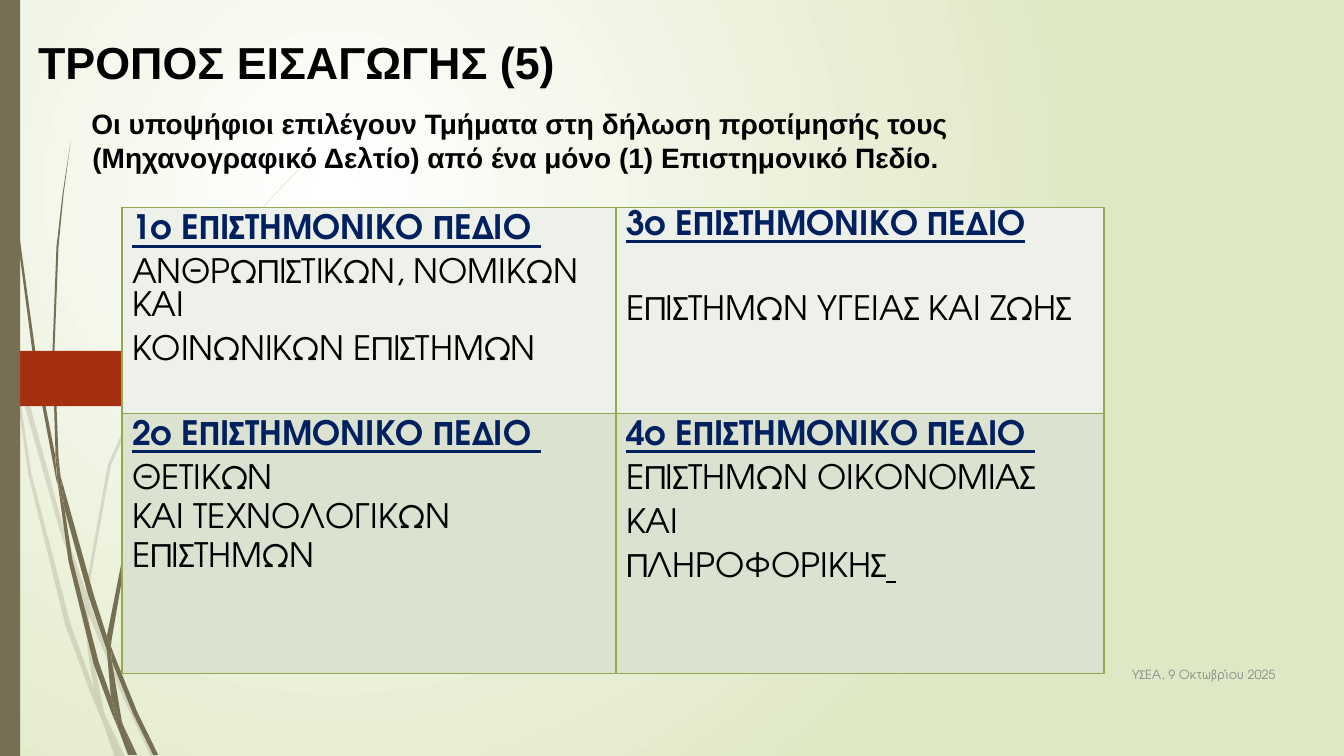
from lxml import etree
from pptx import Presentation
from pptx.dml.color import RGBColor
from pptx.enum.shapes import MSO_SHAPE
from pptx.enum.text import MSO_ANCHOR, PP_ALIGN
from pptx.oxml.ns import qn
from pptx.util import Inches, Pt

BLACK = RGBColor(0x00, 0x00, 0x00)
WHITE = RGBColor(0xFF, 0xFF, 0xFF)
LIME = RGBColor(0xDF, 0xE8, 0xC4)
BROWN = RGBColor(0x76, 0x6F, 0x54)
RED = RGBColor(0xA5, 0x30, 0x10)
NAVY = RGBColor(0x00, 0x20, 0x60)
GRAY = RGBColor(0x8C, 0x8C, 0x8C)
GREEN = RGBColor(0x92, 0xAA, 0x4C)
BANDS = [RGBColor(0xEE, 0xF1, 0xE9), RGBColor(0xDC, 0xE2, 0xD0)]
TOP, MIDDLE = MSO_ANCHOR.TOP, MSO_ANCHOR.MIDDLE
LEFT, CENTER = PP_ALIGN.LEFT, PP_ALIGN.CENTER
RECT = MSO_SHAPE.RECTANGLE
SERIF, GOTHIC = "Arial", "TeX Gyre Adventor"

prs = Presentation()
prs.slide_width, prs.slide_height = Inches(13.33), Inches(7.5)
slide = prs.slides.add_slide(prs.slide_layouts[6])
shapes = slide.shapes


def write(par, text, font=GOTHIC, size=24, color=BLACK, bold=False,
          under=False, align=LEFT, space=None, before=None):
    par.alignment = align
    par.line_spacing = space
    par.space_before = None if before is None else Pt(before)
    run = par.add_run()
    run.text = text
    run.font.name, run.font.size = font, Pt(size)
    run.font.bold, run.font.underline = bold, under
    run.font.color.rgb = color


def paint(shape, color, alpha=None):
    shape.shadow.inherit = False
    shape.fill.solid()
    shape.fill.fore_color.rgb = color
    shape.line.fill.background()
    if alpha:
        tone = shape.element.spPr.find(".//" + qn("a:srgbClr"))
        etree.SubElement(tone, qn("a:alpha"), val=str(alpha * 1000))


# Background: round glow centred a quarter of the way in
fill = slide.background.fill
fill.gradient()
for stop, color in zip(fill.gradient_stops, (WHITE, LIME)):
    stop.color.rgb = color
fill.gradient_stops[0].position, fill.gradient_stops[1].position = 0, 1
grad = slide.element.find(".//" + qn("a:gradFill"))
for lin in grad.findall(qn("a:lin")):
    grad.remove(lin)
glow = etree.SubElement(grad, qn("a:path"), path="circle")
etree.SubElement(glow, qn("a:fillToRect"), l="50000", t="50000",
                 r="100000", b="100000")

# Grass blades: outline points in hundredths of an inch
PALE = [
    [(11, 350), (9, 322), (0, 282), (0, 299), (10, 344)],
    [(58, 522), (84, 599), (85, 586), (62, 520), (14, 345), (17, 376)],
    [(92, 607), (88, 596), (88, 610), (123, 694), (150, 751), (155, 751),
     (127, 692)],
    [(119, 751), (124, 751), (105, 711)],
    [(93, 683), (70, 619), (31, 469), (17, 376), (11, 350), (28, 470),
     (65, 621), (92, 693), (101, 714), (99, 707)],
    [(84, 599), (87, 646), (93, 683), (96, 692), (105, 711), (103, 706),
     (91, 646), (88, 610), (88, 608)],
    [(88, 584), (110, 462), (160, 349), (229, 245), (268, 198), (290, 175),
     (312, 154), (312, 153), (289, 175), (268, 197), (228, 244), (158, 348),
     (107, 461), (85, 584), (85, 586), (88, 596)],
    [(101, 714), (114, 751), (119, 751)],
    [(88, 608), (88, 610), (88, 596), (85, 586), (84, 599)],
    [(96, 692), (93, 683), (99, 707), (101, 714), (119, 751), (105, 711)],
]
DARK = [
    [(7, 110), (17, 233), (33, 355), (56, 477), (57, 481), (55, 457),
     (55, 453), (36, 355), (19, 232), (8, 109), (5, 48), (4, 0), (3, 0),
     (4, 48)],
    [(88, 592), (106, 645), (106, 633), (106, 631), (93, 590), (60, 472),
     (64, 505)],
    [(113, 649), (110, 641), (111, 656), (132, 708), (152, 749), (157, 749),
     (136, 706)],
    [(110, 691), (98, 657), (72, 556), (64, 505), (57, 477), (68, 557),
     (93, 659), (111, 708), (117, 722), (116, 717)],
    [(60, 472), (58, 453), (54, 349), (58, 245), (63, 193), (70, 141),
     (62, 193), (56, 245), (52, 349), (55, 449)],
    [(133, 749), (136, 749), (122, 719)],
    [(57, 477), (64, 505), (60, 472), (55, 449), (55, 453)],
    [(111, 633), (125, 552), (158, 476), (205, 406), (231, 374), (245, 359),
     (261, 344), (260, 344), (245, 358), (231, 373), (204, 405), (156, 474),
     (122, 551), (106, 631), (110, 641)],
    [(117, 722), (127, 749), (131, 749)],
    [(106, 645), (110, 691), (116, 706), (122, 719), (121, 716), (111, 656),
     (109, 651)],
    [(106, 645), (109, 651), (111, 656), (110, 641), (106, 631), (106, 633)],
    [(116, 706), (110, 691), (116, 717), (117, 722), (130, 749), (133, 749),
     (122, 719)],
]
ARROW = [(173, 377), (148, 402), (146, 403), (0, 403), (0, 348), (146, 348),
         (148, 349), (173, 374)]
outlines = [(pts, BROWN, 20) for pts in PALE]
outlines += [(pts, BROWN, None) for pts in DARK]
outlines.append((ARROW, RED, None))
for pts, color, alpha in outlines:
    pen = shapes.build_freeform(*pts[0], scale=Inches(0.01))
    pen.add_line_segments(pts[1:], close=True)
    paint(pen.convert_to_shape(), color, alpha)

# Left bar
paint(shapes.add_shape(RECT, 0, 0, Inches(0.2), Inches(7.5)), BROWN)

# Title, intro and footer
TEXTS = [
    ((0.28, 0.3, 11.59, 0.6), TOP, "ΤΡΟΠΟΣ ΕΙΣΑΓΩΓΗΣ (5)",
     dict(font=SERIF, size=32, bold=True)),
    ((0.28, 1.01, 9.75, 0.77), TOP,
     "Οι υποψήφιοι επιλέγουν Τμήματα στη δήλωση προτίμησής τους "
     "(Μηχανογραφικό Δελτίο) από ένα μόνο (1) Επιστημονικό Πεδίο. ",
     dict(font=SERIF, size=20, bold=True, align=CENTER)),
    ((11.13, 6.59, 2.2, 0.2), MIDDLE, "ΥΣΕΑ, 9 Οκτωβρίου 2025",
     dict(size=9, color=GRAY)),
]
for place, anchor, text, style in TEXTS:
    frame = shapes.add_textbox(*map(Inches, place)).text_frame
    frame.word_wrap = True
    frame.vertical_anchor = anchor
    write(frame.paragraphs[0], text, **style)

# Table of fields: each line is text, line spacing, space before
FIELDS = [
    [[("1ο ΕΠΙΣΤΗΜΟΝΙΚΟ ΠΕΔΙΟ ", 1.07, None),
      ("ΑΝΘΡΩΠΙΣΤΙΚΩΝ, ΝΟΜΙΚΩΝ ΚΑΙ", 1.07, 7.5),
      ("ΚΟΙΝΩΝΙΚΩΝ ΕΠΙΣΤΗΜΩΝ", 1.07, 7.5)],
     [("3ο ΕΠΙΣΤΗΜΟΝΙΚΟ ΠΕΔΙΟ", 0.9, None),
      ("ΕΠΙΣΤΗΜΩΝ ΥΓΕΙΑΣ ΚΑΙ ΖΩΗΣ", 1.07, 38)]],
    [[("2ο ΕΠΙΣΤΗΜΟΝΙΚΟ ΠΕΔΙΟ ", 1.07, None),
      ("ΘΕΤΙΚΩΝ", 1.07, 7.5),
      ("ΚΑΙ ΤΕΧΝΟΛΟΓΙΚΩΝ", 0.9, 7.5),
      ("ΕΠΙΣΤΗΜΩΝ", 0.9, 7.5)],
     [("4ο ΕΠΙΣΤΗΜΟΝΙΚΟ ΠΕΔΙΟ ", 1.07, None),
      ("ΕΠΙΣΤΗΜΩΝ ΟΙΚΟΝΟΜΙΑΣ", 1.07, 7.5),
      ("ΚΑΙ", 1.07, 7.5),
      ("ΠΛΗΡΟΦΟΡΙΚΗΣ", 1.07, 7.5)]],
]
table = shapes.add_table(2, 2, Inches(1.21), Inches(2.06),
                         Inches(9.74), Inches(4.62)).table
table.first_row = table.horz_banding = False
for col, width in zip(table.columns, (4.9, 4.84)):
    col.width = Inches(width)
for row, height in zip(table.rows, (2.04, 2.58)):
    row.height = Inches(height)
for r, row in enumerate(FIELDS):
    for c, lines in enumerate(row):
        cell = table.cell(r, c)
        props = cell._tc.get_or_add_tcPr()
        for side in ("lnL", "lnR", "lnT", "lnB"):
            edge = etree.SubElement(props, qn("a:" + side), w=str(Pt(1)))
            solid = etree.SubElement(edge, qn("a:solidFill"))
            etree.SubElement(solid, qn("a:srgbClr"), val=str(GREEN))
        cell.fill.solid()
        cell.fill.fore_color.rgb = BANDS[r]
        frame = cell.text_frame
        for i, (text, space, before) in enumerate(lines):
            head = i == 0
            par = frame.paragraphs[0] if head else frame.add_paragraph()
            write(par, text, color=NAVY if head else BLACK, bold=head,
                  under=head, space=space, before=before)

# Underlined space that ends the last field
write(par, " ", under=True, space=1.07, before=7.5)

prs.save("out.pptx")
